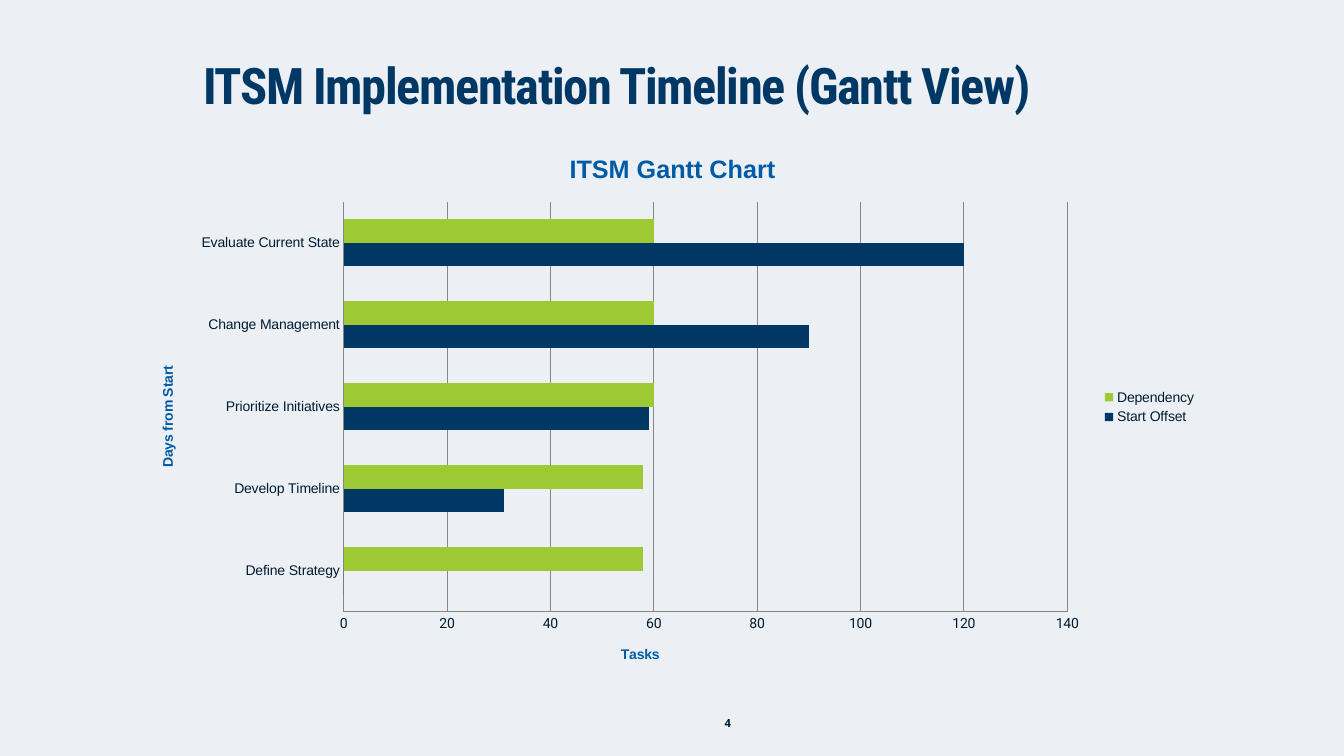
import pptx
import pptx.chart.data
import pptx.dml.color
import pptx.enum.chart
import pptx.enum.text
import pptx.util
from pptx.util import Inches

NAVY = "003865"
BLUE = "005BA6"
GREEN = "9DCA33"
INK = "001C33"
GRID = "868686"
BACKGROUND = "ECF0F5"

TASKS = ["Define Strategy", "Develop Timeline", "Prioritize Initiatives",
         "Change Management", "Evaluate Current State"]
SERIES = [
    ("Start Offset", [0, 31, 59, 90, 120], NAVY),
    ("Dependency", [58, 58, 60, 60, 60], GREEN),
]


def rgb(value):
    return pptx.dml.color.RGBColor.from_string(value)


def style_font(font, name, size, color, bold=False):
    font.name = name
    font.size = pptx.util.Pt(size)
    font.bold = bold
    font.color.rgb = rgb(color)


def add_label(slide, text, left, top, width, height, font_name, size, color, align):
    """Add a bold, vertically centred line of text and return its paragraph."""
    frame = slide.shapes.add_textbox(
        Inches(left), Inches(top), Inches(width), Inches(height)).text_frame
    frame.word_wrap = True
    frame.vertical_anchor = pptx.enum.text.MSO_ANCHOR.MIDDLE
    paragraph = frame.paragraphs[0]
    paragraph.alignment = align
    run = paragraph.add_run()
    run.text = text
    style_font(run.font, font_name, size, color, bold=True)
    return paragraph


def set_chart_title(titled, text, size):
    """Title a chart or one of its axes."""
    paragraph = titled.text_frame.paragraphs[0]
    run = paragraph.add_run()
    run.text = text
    style_font(run.font, "Arial", size, BLUE, bold=True)


def style_axis(axis, title, font_name):
    set_chart_title(axis.axis_title, title, 10)
    axis.major_tick_mark = pptx.enum.chart.XL_TICK_MARK.NONE
    axis.minor_tick_mark = pptx.enum.chart.XL_TICK_MARK.NONE
    style_font(axis.tick_labels.font, font_name, 10, INK)
    axis.format.line.color.rgb = rgb(GRID)


def add_gantt_chart(slide):
    chart_data = pptx.chart.data.CategoryChartData()
    chart_data.categories = TASKS
    for name, days, _ in SERIES:
        chart_data.add_series(name, days)
    chart = slide.shapes.add_chart(
        pptx.enum.chart.XL_CHART_TYPE.BAR_CLUSTERED,
        Inches(1.37), Inches(1.3), Inches(10.6), Inches(5.48), chart_data).chart
    style_font(chart.font, "Roboto", 10, INK)
    set_chart_title(chart.chart_title, "ITSM Gantt Chart", 18)

    style_axis(chart.category_axis, "Days from Start", "Arial")
    style_axis(chart.value_axis, "Tasks", "Roboto")
    chart.value_axis.has_major_gridlines = True
    chart.value_axis.major_gridlines.format.line.color.rgb = rgb(GRID)

    chart.has_legend = True
    chart.legend.position = pptx.enum.chart.XL_LEGEND_POSITION.RIGHT
    chart.legend.include_in_layout = False
    style_font(chart.legend.font, "Arial", 10, INK)

    plot = chart.plots[0]
    plot.gap_width = 150
    plot.vary_by_categories = False
    for bars, (_, _, color) in zip(plot.series, SERIES):
        bars.format.fill.solid()
        bars.format.fill.fore_color.rgb = rgb(color)


def main():
    deck = pptx.Presentation()
    deck.slide_width = Inches(13.33)
    deck.slide_height = Inches(7.5)
    slide = deck.slides.add_slide(deck.slide_layouts[6])
    slide.background.fill.solid()
    slide.background.fill.fore_color.rgb = rgb(BACKGROUND)

    align = pptx.enum.text.PP_ALIGN
    add_label(slide, "4", 6.67, 6.97, 1.1, 0.4, "Open Sans", 8, INK, align.CENTER)
    heading = add_label(slide, "ITSM Implementation Timeline (Gantt View)",
                        1.92, 0.17, 11.4, 1.45, "Roboto Condensed", 36, NAVY, align.LEFT)
    heading.line_spacing = 0.8
    heading.runs[0].font._element.set("spc", "-100")
    add_gantt_chart(slide)
    deck.save("out.pptx")


if __name__ == "__main__":
    main()
